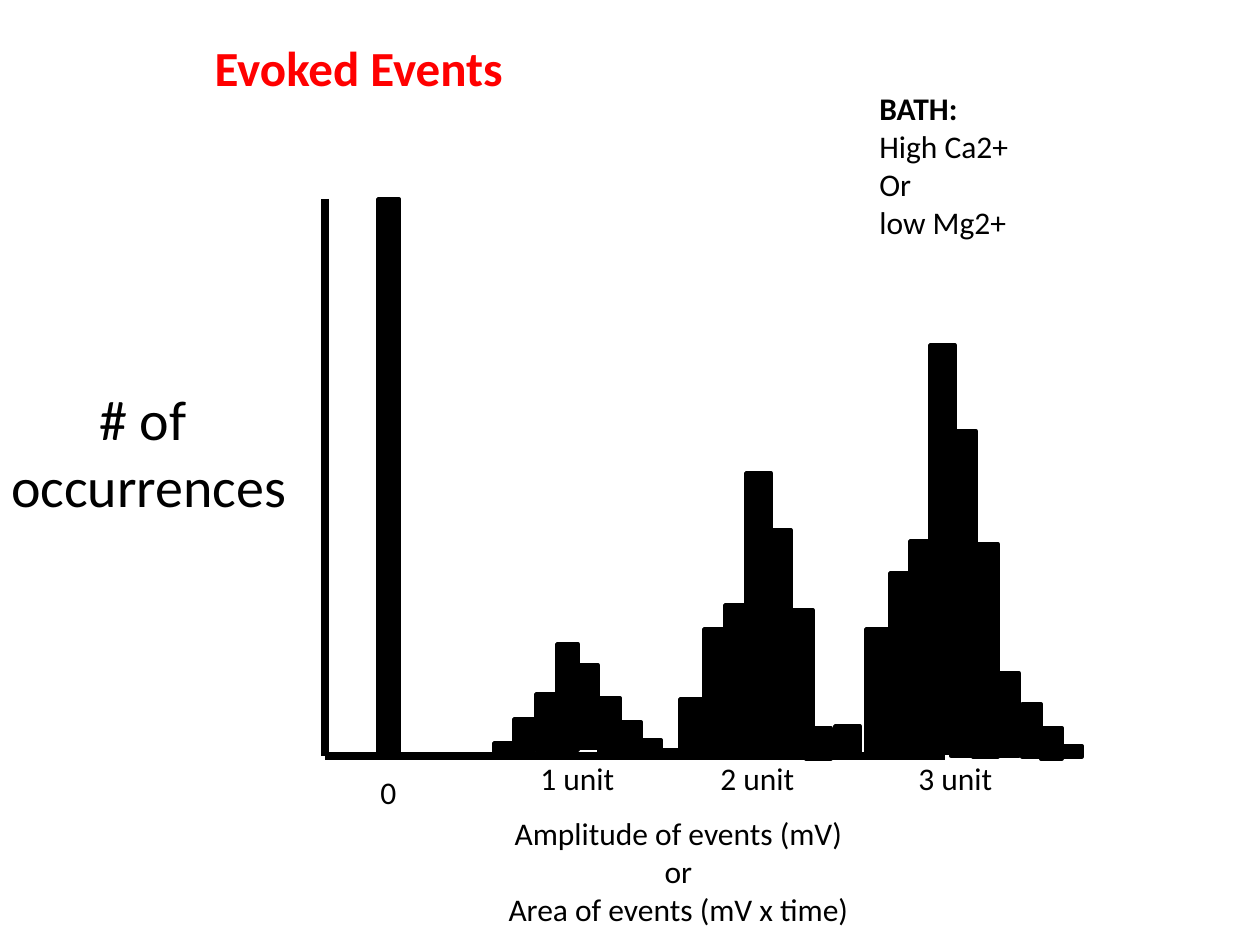
from lxml.etree import SubElement
from pptx import Presentation
from pptx.dml.color import RGBColor
from pptx.enum.shapes import MSO_CONNECTOR, MSO_SHAPE
from pptx.enum.text import MSO_ANCHOR, MSO_AUTO_SIZE, PP_ALIGN
from pptx.oxml.ns import qn
from pptx.util import Pt

PX = 914400 // 126
BLACK = RGBColor(0, 0, 0)
RED = RGBColor(255, 0, 0)
FONT = "Calibri"

AXIS_LEFT, AXIS_RIGHT, AXIS_TOP, BASELINE = 325, 945, 199, 756

# Each bar: left, top, width, bottom
ZERO_BAR = [(378, AXIS_TOP, 21, BASELINE)]
ONE_UNIT_BARS = [
    (494, 743, 21, 756), (514, 719, 21, 750), (536, 694, 21, 750),
    (557, 644, 21, 750), (577, 665, 21, 748), (599, 698, 21, 753),
    (620, 722, 21, 752), (640, 740, 21, 751), (662, 750, 21, 756),
]
TWO_UNIT_BARS = [
    (680, 699, 23, 756), (704, 629, 20, 753), (725, 605, 25, 750),
    (746, 473, 25, 750), (766, 530, 25, 750), (788, 610, 25, 755),
    (806, 728, 25, 759),
]
THREE_UNIT_BARS = [
    (835, 726, 25, 756), (866, 629, 23, 752), (890, 573, 20, 756),
    (910, 541, 25, 753), (930, 345, 25, 753), (951, 431, 25, 756),
    (973, 544, 25, 757), (998, 673, 21, 756), (1022, 704, 19, 757),
    (1041, 728, 21, 759), (1061, 746, 21, 757),
]


def px(*lengths):
    return [length * PX for length in lengths]


def format_paragraph(paragraph, size, color=BLACK, bold=False, align=PP_ALIGN.LEFT):
    paragraph.alignment = align
    font = paragraph.font
    font.name, font.size, font.bold = FONT, Pt(size), bold
    font.color.rgb = color


def add_title(slide, text, left, top, width, height):
    title = slide.shapes.title
    title.left, title.top, title.width, title.height = px(left, top, width, height)
    frame = title.text_frame
    frame.text = text
    frame.word_wrap = False
    frame.auto_size = MSO_AUTO_SIZE.NONE
    frame.vertical_anchor = MSO_ANCHOR.TOP
    format_paragraph(frame.paragraphs[0], 28, RED, bold=True)


def add_label(slide, text, left, top, width, height, size=18, align=PP_ALIGN.LEFT, wrap=False):
    frame = slide.shapes.add_textbox(*px(left, top, width, height)).text_frame
    frame.text = text
    frame.word_wrap = wrap
    for paragraph in frame.paragraphs:
        format_paragraph(paragraph, size, align=align)
    return frame


def add_axis(slide, start_x, start_y, end_x, end_y):
    axis = slide.shapes.add_connector(
        MSO_CONNECTOR.STRAIGHT, *px(start_x, start_y, end_x, end_y))
    axis.line.color.rgb = BLACK
    axis.line.width = Pt(4.5)
    SubElement(axis.element.spPr, qn("a:effectLst"))


def add_bar(slide, left, top, width, bottom):
    bar = slide.shapes.add_shape(
        MSO_SHAPE.RECTANGLE, *px(left, top, width, bottom - top))
    bar.shadow.inherit = False
    bar.fill.solid()
    bar.fill.fore_color.rgb = BLACK
    bar.line.color.rgb = BLACK
    bar.line.width = Pt(2)


def main():
    presentation = Presentation()
    presentation.slide_width, presentation.slide_height = px(1260, 945)
    slide = presentation.slides.add_slide(presentation.slide_layouts[5])

    add_title(slide, "Evoked Events", 202, 31, 316, 72)
    add_axis(slide, AXIS_LEFT, AXIS_TOP, AXIS_LEFT, BASELINE)
    add_axis(slide, AXIS_RIGHT, BASELINE, AXIS_LEFT, BASELINE)
    for bar in ZERO_BAR + ONE_UNIT_BARS + TWO_UNIT_BARS + THREE_UNIT_BARS:
        add_bar(slide, *bar)

    add_label(slide, "# of \noccurrences", -3, 378, 304, 149, 32, PP_ALIGN.CENTER)
    add_label(slide, "Amplitude of events (mV)\nor\nArea of events (mV x time)",
              494, 808, 369, 127, align=PP_ALIGN.CENTER)
    add_label(slide, "0", 368, 767, 42, 50)
    for text, left in (("1 unit", 528), ("2 unit", 708), ("3 unit", 906)):
        add_label(slide, text, left, 753, 101, 50)

    bath = add_label(slide, "BATH:\nHigh Ca2+\nOr\nlow Mg2+", 867, 83, 387, 204, wrap=True)
    bath.paragraphs[0].font.bold = True

    presentation.save("out.pptx")


if __name__ == "__main__":
    main()
